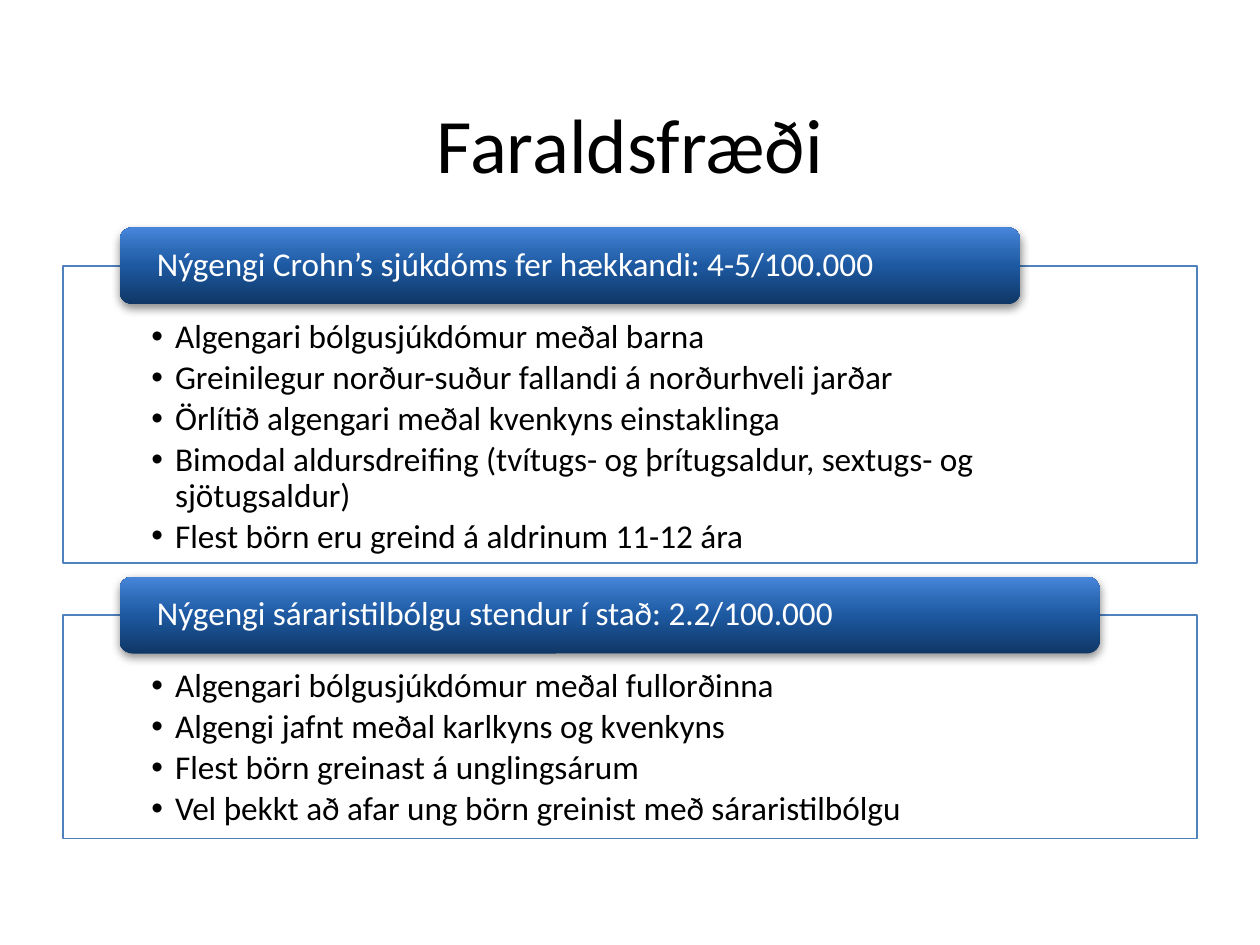
import pptx
import pptx.util
import pptx.dml.color
import pptx.enum.shapes
import pptx.enum.text
import pptx.oxml
import pptx.oxml.ns
from pptx.util import Cm, Pt

# Content
TITLE = "Faraldsfræði"
SECTIONS = [
    {
        "heading": "Nýgengi Crohn’s sjúkdóms fer hækkandi: 4-5/100.000",
        "top": 5.36, "height": 5.99, "heading_width": 18.16,
        "points": [
            "Algengari bólgusjúkdómur meðal barna",
            "Greinilegur norður-suður fallandi á norðurhveli jarðar",
            "Örlítið algengari meðal kvenkyns einstaklinga",
            "Bimodal aldursdreifing (tvítugs- og þrítugsaldur, sextugs- og sjötugsaldur)",
            "Flest börn eru greind á aldrinum 11-12 ára",
        ],
    },
    {
        "heading": "Nýgengi sáraristilbólgu stendur í stað: 2.2/100.000",
        "top": 12.4, "height": 4.5, "heading_width": 19.76,
        "points": [
            "Algengari bólgusjúkdómur meðal fullorðinna",
            "Algengi jafnt meðal karlkyns og kvenkyns",
            "Flest börn greinast á unglingsárum",
            "Vel þekkt að afar ung börn greinist með sáraristilbólgu",
        ],
    },
]

# Format, lengths in centimetres
COLORS = {"black": "000000", "white": "FFFFFF", "outline": "4F81BD"}
GRADIENT = [(0, "0F3766"), (50, "1D59A1"), (70, "2D6AB6"), (100, "4786DB")]
LEFT, WIDTH = 1.27, 22.86
HEADING_LEFT, HEADING_HEIGHT = 2.41, 1.55
TEXT_SIZE = 19
NAMESPACE = pptx.oxml.ns.nsdecls("a")
ALIGN = pptx.enum.text.PP_ALIGN
ANCHOR = pptx.enum.text.MSO_ANCHOR


def color(name):
    return pptx.dml.color.RGBColor.from_string(COLORS[name])


def write_text(paragraph, text, size=TEXT_SIZE, fill="black", align=ALIGN.LEFT,
               line_spacing=0.9, space_after=0, bullet=False):
    paragraph.alignment = align
    paragraph.line_spacing = line_spacing
    paragraph.space_before = Pt(0)
    paragraph.space_after = Pt(space_after)
    if bullet:
        paragraph.level = 1
        properties = paragraph._p.get_or_add_pPr()
        properties.set("marL", str(Cm(0.48)))
        properties.set("indent", str(-Cm(0.48)))
        properties.append(pptx.oxml.parse_xml(f'<a:buChar {NAMESPACE} char="•"/>'))
    run = paragraph.add_run()
    run.text = text
    run.font.size = Pt(size)
    run.font.name = "Calibri"
    run.font.color.rgb = color(fill)


def place(shape, left, top, width, height):
    shape.left, shape.top = Cm(left), Cm(top)
    shape.width, shape.height = Cm(width), Cm(height)


def set_frame(frame, anchor, side, top=0, bottom=0):
    frame.word_wrap = True
    frame.auto_size = pptx.enum.text.MSO_AUTO_SIZE.NONE
    frame.vertical_anchor = anchor
    frame.margin_left = frame.margin_right = Cm(side)
    frame.margin_top, frame.margin_bottom = Cm(top), Cm(bottom)


def style_heading(shape):
    """Gradient from dark at the bottom to light at the top, with a soft shadow."""
    shape.line.fill.background()
    shape.shadow.inherit = False
    stops = "".join(f'<a:gs pos="{position * 1000}"><a:srgbClr val="{value}"/></a:gs>'
                    for position, value in GRADIENT)
    properties = shape._element.spPr
    properties.find(pptx.oxml.ns.qn("a:ln")).addprevious(pptx.oxml.parse_xml(
        f'<a:gradFill {NAMESPACE} rotWithShape="1"><a:gsLst>{stops}</a:gsLst>'
        f'<a:lin ang="{270 * 60000}" scaled="0"/></a:gradFill>'))
    properties.find(pptx.oxml.ns.qn("a:effectLst")).append(pptx.oxml.parse_xml(
        f'<a:outerShdw {NAMESPACE} blurRad="{Pt(5)}" dist="{Pt(2)}" dir="{90 * 60000}" '
        'rotWithShape="0"><a:srgbClr val="000000"><a:alpha val="43000"/></a:srgbClr>'
        '</a:outerShdw>'))


def add_section(slide, body, section):
    # Outlined list
    place(body, LEFT, section["top"], WIDTH, section["height"])
    body.fill.solid()
    body.fill.fore_color.rgb = color("white")
    body.line.color.rgb = color("outline")
    body.line.width = Pt(0.75)
    frame = body.text_frame
    set_frame(frame, ANCHOR.TOP, side=1.78, top=1.09, bottom=0.38)
    for index, point in enumerate(section["points"]):
        paragraph = frame.add_paragraph() if index else frame.paragraphs[0]
        write_text(paragraph, point, space_after=TEXT_SIZE * 0.15, bullet=True)

    # Heading bar, centred on the top edge of the list
    bar = slide.shapes.add_shape(pptx.enum.shapes.MSO_SHAPE.ROUNDED_RECTANGLE, 0, 0, 0, 0)
    place(bar, HEADING_LEFT, section["top"] - HEADING_HEIGHT / 2,
          section["heading_width"], HEADING_HEIGHT)
    style_heading(bar)
    set_frame(bar.text_frame, ANCHOR.MIDDLE, side=0.68)
    write_text(bar.text_frame.paragraphs[0], section["heading"], fill="white")


def main():
    presentation = pptx.Presentation()
    presentation.slide_width, presentation.slide_height = Cm(25.4), Cm(19.05)
    slide = presentation.slides.add_slide(
        presentation.slide_layouts.get_by_name("Two Content"))
    title, *bodies = list(slide.placeholders)[:3]

    # Title
    place(title, LEFT, 0.76, WIDTH, 3.18)
    set_frame(title.text_frame, ANCHOR.BOTTOM, side=0.25, top=0.13, bottom=0.13)
    write_text(title.text_frame.paragraphs[0], TITLE, size=44, align=ALIGN.CENTER,
               line_spacing=1.0)

    # Sections
    for body, section in zip(bodies, SECTIONS):
        add_section(slide, body, section)

    presentation.save("out.pptx")


if __name__ == "__main__":
    main()
